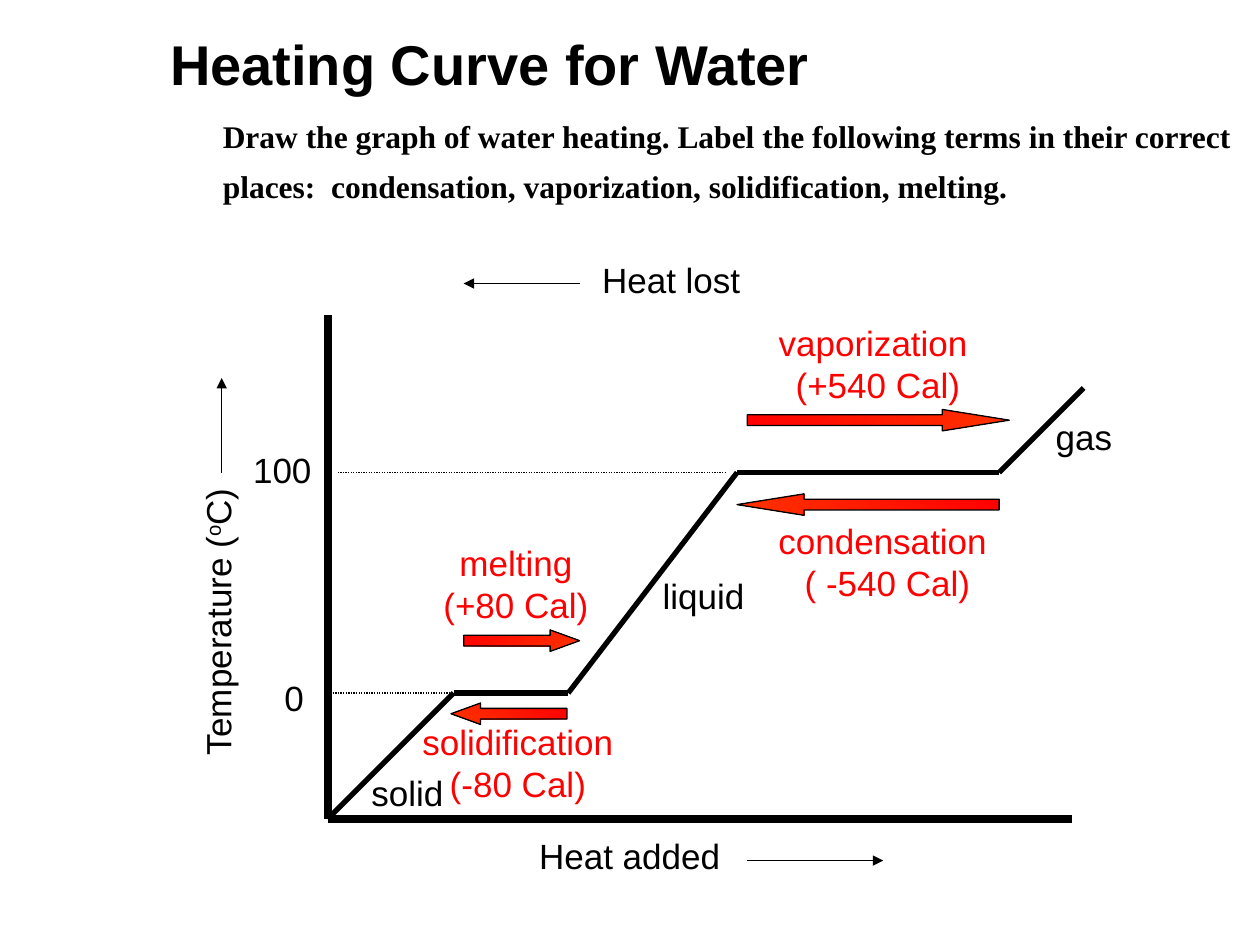
from dataclasses import dataclass
from itertools import pairwise

from lxml.etree import SubElement
from pptx import Presentation
from pptx.dml.color import RGBColor
from pptx.enum.dml import MSO_LINE
from pptx.enum.shapes import MSO_CONNECTOR, MSO_SHAPE
from pptx.enum.text import MSO_ANCHOR, MSO_AUTO_SIZE, PP_ALIGN
from pptx.oxml.ns import qn
from pptx.util import Inches, Pt

BLACK = RGBColor(0x00, 0x00, 0x00)
RED = RGBColor(0xFF, 0x00, 0x00)
ORANGE_RED = RGBColor(0xFF, 0x33, 0x00)

Point = tuple[float, float]


@dataclass
class Label:
    lines: list[str]
    left: float
    top: float
    width: float
    color: RGBColor = BLACK
    align: PP_ALIGN = PP_ALIGN.LEFT
    wrap: bool = False


@dataclass
class BlockArrow:
    left: float
    top: float
    width: float
    head: float
    flipped: bool = False


ORIGIN = (2.6, 6.5)
AXIS_ENDS = [(2.6, 2.5), (8.51, 6.5)]
CURVE = [ORIGIN, (3.6, 5.5), (4.51, 5.5), (5.85, 3.75), (7.93, 3.75), (8.6, 3.08)]
GUIDES = [((2.6, 5.5), (3.6, 5.5)), ((2.68, 3.75), (5.76, 3.75))]
DIRECTIONS = [
    ((1.76, 3.75), (1.76, 3)),
    ((5.93, 6.83), (7.01, 6.83)),
    ((4.6, 2.25), (3.68, 2.25)),
]
BLOCK_ARROWS = [
    BlockArrow(3.68, 5, 0.92, 1.375),
    BlockArrow(3.58, 5.58, 0.92, 1.375, True),
    BlockArrow(5.93, 3.25, 2.08, 3.125),
    BlockArrow(5.85, 3.92, 2.08, 3.125, True),
]
LABELS = [
    Label(["solid"], 2.85, 6.07, 0.8),
    Label(["liquid"], 5.16, 4.51, 0.88),
    Label(["gas"], 8.28, 3.25, 0.68),
    Label(["vaporization", " (+540 Cal)"], 6.08, 2.5, 1.7, RED, PP_ALIGN.CENTER, True),
    Label(["condensation", " ( -540 Cal)"], 6.05, 4.07, 1.91, RED, PP_ALIGN.CENTER),
    Label(["melting", "(+80 Cal)"], 3.39, 4.25, 1.41, RED, PP_ALIGN.CENTER),
    Label(["solidification", "(-80 Cal)"], 3.22, 5.67, 1.78, RED, PP_ALIGN.CENTER),
    Label(["Heat added"], 4.18, 6.57, 1.68),
    Label(["0"], 2.16, 5.32, 0.4),
    Label(["100"], 1.91, 3.51, 0.72),
    Label(["Heat lost"], 4.68, 2, 1.34),
]


def add_run(p, text: str, size: float = 20, color: RGBColor = BLACK,
            font: str = "Arial", bold: bool = False):
    r = p.add_run()
    r.text = text
    r.font.name = font
    r.font.size = Pt(size)
    r.font.bold = bold
    r.font.color.rgb = color
    return r


def add_line(s, start: Point, end: Point, weight: float,
             dash: MSO_LINE | None = None, arrow: bool = False) -> None:
    line = s.shapes.add_connector(
        MSO_CONNECTOR.STRAIGHT, *(Inches(v) for v in start + end))
    line.line.color.rgb = BLACK
    line.line.width = Pt(weight)
    if dash is not None:
        line.line.dash_style = dash
    if arrow:
        SubElement(line.line._get_or_add_ln(), qn("a:tailEnd"), type="triangle")
    SubElement(line._element.spPr, qn("a:effectLst"))


def add_block_arrow(s, arrow: BlockArrow) -> None:
    sp = s.shapes.add_shape(
        MSO_SHAPE.RIGHT_ARROW, Inches(arrow.left), Inches(arrow.top),
        Inches(arrow.width), Inches(0.17))
    sp.shadow.inherit = False
    sp.adjustments[0] = 0.5
    sp.adjustments[1] = arrow.head
    sp.fill.gradient()
    sp.fill.gradient_angle = 315
    for stop, color in zip(sp.fill.gradient_stops, (RED, ORANGE_RED)):
        stop.color.rgb = color
    sp.line.color.rgb = BLACK
    sp.line.width = Pt(0.75)
    if arrow.flipped:
        sp._element.spPr.get_or_add_xfrm().set("flipH", "1")


def add_box(s, left: float, top: float, width: float, height: float, wrap: bool):
    sp = s.shapes.add_textbox(Inches(left), Inches(top), Inches(width), Inches(height))
    sp.text_frame.word_wrap = wrap
    sp.text_frame.auto_size = MSO_AUTO_SIZE.SHAPE_TO_FIT_TEXT
    return sp


def add_label(s, label: Label) -> None:
    height = 0.43 if len(label.lines) == 1 else 0.77
    tf = add_box(s, label.left, label.top, label.width, height, label.wrap).text_frame
    for i, text in enumerate(label.lines):
        p = tf.add_paragraph() if i else tf.paragraphs[0]
        p.alignment = label.align
        add_run(p, text, color=label.color)


def add_title(s) -> None:
    title = s.shapes.title
    title.left, title.top = Inches(1.25), Inches(0.25)
    title.width, title.height = Inches(8.5), Inches(0.5)
    tf = title.text_frame
    tf.word_wrap = True
    tf.auto_size = MSO_AUTO_SIZE.NONE
    tf.vertical_anchor = MSO_ANCHOR.MIDDLE
    p = tf.paragraphs[0]
    p.alignment = PP_ALIGN.LEFT
    add_run(p, "Heating Curve for Water", 32, bold=True)


def add_prompt(s) -> None:
    tf = add_box(s, 1.67, 0.79, 8.33, 0.88, True).text_frame
    tf.vertical_anchor = MSO_ANCHOR.MIDDLE
    p = tf.paragraphs[0]
    p.line_spacing = 1.31
    add_run(p, "Draw the graph of water heating. Label the following terms in their "
               "correct places:  condensation, vaporization, solidification, melting.",
            18, font="Times New Roman", bold=True)


def add_temperature_label(s) -> None:
    sp = add_box(s, 0.55, 4.7, 2.35, 0.43, False)
    sp.rotation = 270
    p = sp.text_frame.paragraphs[0]
    add_run(p, "Temperature (")
    degree = add_run(p, "o")
    degree.font._element.set("baseline", "30000")
    add_run(p, "C)")


def main() -> None:
    prs = Presentation()
    prs.slide_width, prs.slide_height = Inches(10), Inches(7.5)
    s = prs.slides.add_slide(prs.slide_layouts[5])
    add_title(s)
    add_prompt(s)
    for end in AXIS_ENDS:
        add_line(s, ORIGIN, end, 4.5)
    for start, end in pairwise(CURVE):
        add_line(s, start, end, 3)
    for start, end in GUIDES:
        add_line(s, start, end, 0.75, dash=MSO_LINE.ROUND_DOT)
    for start, end in DIRECTIONS:
        add_line(s, start, end, 0.75, arrow=True)
    for arrow in BLOCK_ARROWS:
        add_block_arrow(s, arrow)
    for label in LABELS:
        add_label(s, label)
    add_temperature_label(s)
    prs.save("out.pptx")


if __name__ == "__main__":
    main()
